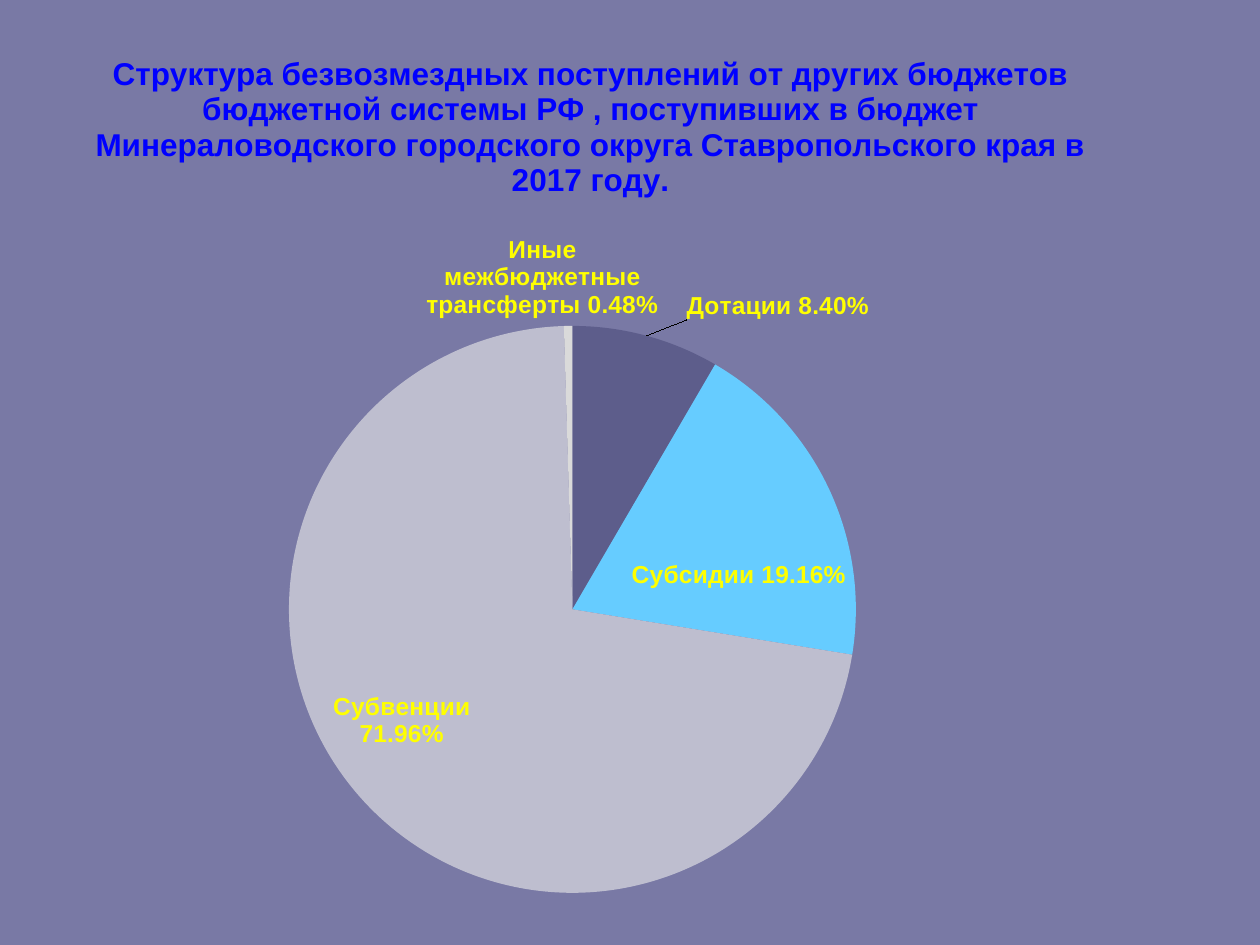
from lxml import etree
from pptx import Presentation
from pptx.chart.data import CategoryChartData
from pptx.dml.color import RGBColor
from pptx.enum.chart import XL_CHART_TYPE, XL_LABEL_POSITION
from pptx.oxml.ns import qn
from pptx.util import Pt

PIE = XL_CHART_TYPE.PIE
CENTER = XL_LABEL_POSITION.CENTER
OUTSIDE = XL_LABEL_POSITION.OUTSIDE_END

EMU_PER_PX = 914400 // 126
FONT = "Arial"
PERCENT = "0.00%"
COLORS = {
    "background": "7979A5",
    "title": "0000FF",
    "label": "FFFF00",
    "text": "FFFFFF",
}

TITLE = (
    "Структура безвозмездных поступлений от других бюджетов бюджетной системы РФ , "
    "поступивших в бюджет Минераловодского городского округа Ставропольского края в 2017 году."
)
# Category, share, slice colour, label position, label shift (fractions), separator
SLICES = [
    ("Дотации", 0.084, "5D5D8B", OUTSIDE, (0.03, -0.01), " "),
    ("Субсидии", 0.1916, "66CCFF", CENTER, (0.03, 0.03), " "),
    ("Субвенции", 0.7196, "BEBECF", CENTER, (-0.05, 0.02), "\n"),
    ("Иные межбюджетные трансферты", 0.0048, "DADADA", OUTSIDE, (-0.02, 0), " "),
]


def px(length):
    return length * EMU_PER_PX


def color(name):
    return RGBColor.from_string(COLORS[name])


def set_layout(parent, index, **values):
    """Give a chart part a manual layout in fractions of the chart."""
    old = parent.find(qn("c:layout"))
    if old is not None:
        parent.remove(old)
    layout = etree.Element(qn("c:layout"))
    manual = etree.SubElement(layout, qn("c:manualLayout"))
    for tag, value in values.items():
        etree.SubElement(manual, qn(f"c:{tag}")).set("val", str(value))
    parent.insert(index, layout)


class SlideBuilder:
    def __init__(self, presentation):
        self.slide = presentation.slides.add_slide(presentation.slide_layouts[6])
        fill = self.slide.background.fill
        fill.solid()
        fill.fore_color.rgb = color("background")

    def style(self, font, size, color_name, bold=True):
        font.name = FONT
        font.size = Pt(size)
        font.bold = bold
        font.color.rgb = color(color_name)

    def pie(self, left, top, width, height):
        data = CategoryChartData(number_format=PERCENT)
        data.categories = [row[0] for row in SLICES]
        data.add_series("Series 1", [row[1] for row in SLICES])
        frame = self.slide.shapes.add_chart(
            PIE, px(left), px(top), px(width), px(height), data)
        chart = frame.chart
        chart.has_legend = False
        self.style(chart.font, 10, "text", bold=False)
        chart.plots[0].vary_by_categories = True
        plot_area = chart.plots[0]._element.getparent()
        set_layout(plot_area, 0, layoutTarget="inner", xMode="edge", yMode="edge",
                   x=0.2336, y=0.333, w=0.443, h=0.6465)
        return chart

    def chart_title(self, chart, text):
        text_frame = chart.chart_title.text_frame
        text_frame.text = text
        self.style(text_frame.paragraphs[0].runs[0].font, 18, "title")
        set_layout(chart.chart_title._element, 1, xMode="edge", yMode="edge",
                   x=0.078, y=0.015)

    def slices(self, series):
        labels = series.data_labels
        labels.show_value = labels.show_category_name = True
        labels.number_format = PERCENT
        labels.number_format_is_linked = False
        self.style(labels.font, 14, "label")
        for index, (_, _, fill_color, position, shift, separator) in enumerate(SLICES):
            point = series.points[index]
            point.format.fill.solid()
            point.format.fill.fore_color.rgb = RGBColor.from_string(fill_color)
            point.format.line.fill.background()
            self.style(point.data_label.font, 14, "label")
            point.data_label.position = position
            self.finish_label(labels._element.findall(qn("c:dLbl"))[index], shift, separator)

    def finish_label(self, label, shift, separator):
        set_layout(label, 1, x=shift[0], y=shift[1])
        number_format = etree.Element(qn("c:numFmt"), formatCode=PERCENT, sourceLinked="0")
        label.insert(2, number_format)
        label.find(qn("c:showVal")).set("val", "1")
        label.find(qn("c:showCatName")).set("val", "1")
        label.find(qn("c:showPercent")).set("val", "0")
        etree.SubElement(label, qn("c:separator")).text = separator


def main():
    presentation = Presentation()
    presentation.slide_width = px(1260)
    presentation.slide_height = px(945)
    builder = SlideBuilder(presentation)

    # Pie chart with its title and labelled slices
    chart = builder.pie(-10, 34, 1280, 877)
    builder.chart_title(chart, TITLE)
    builder.slices(chart.plots[0].series[0])

    presentation.save("out.pptx")


if __name__ == "__main__":
    main()
